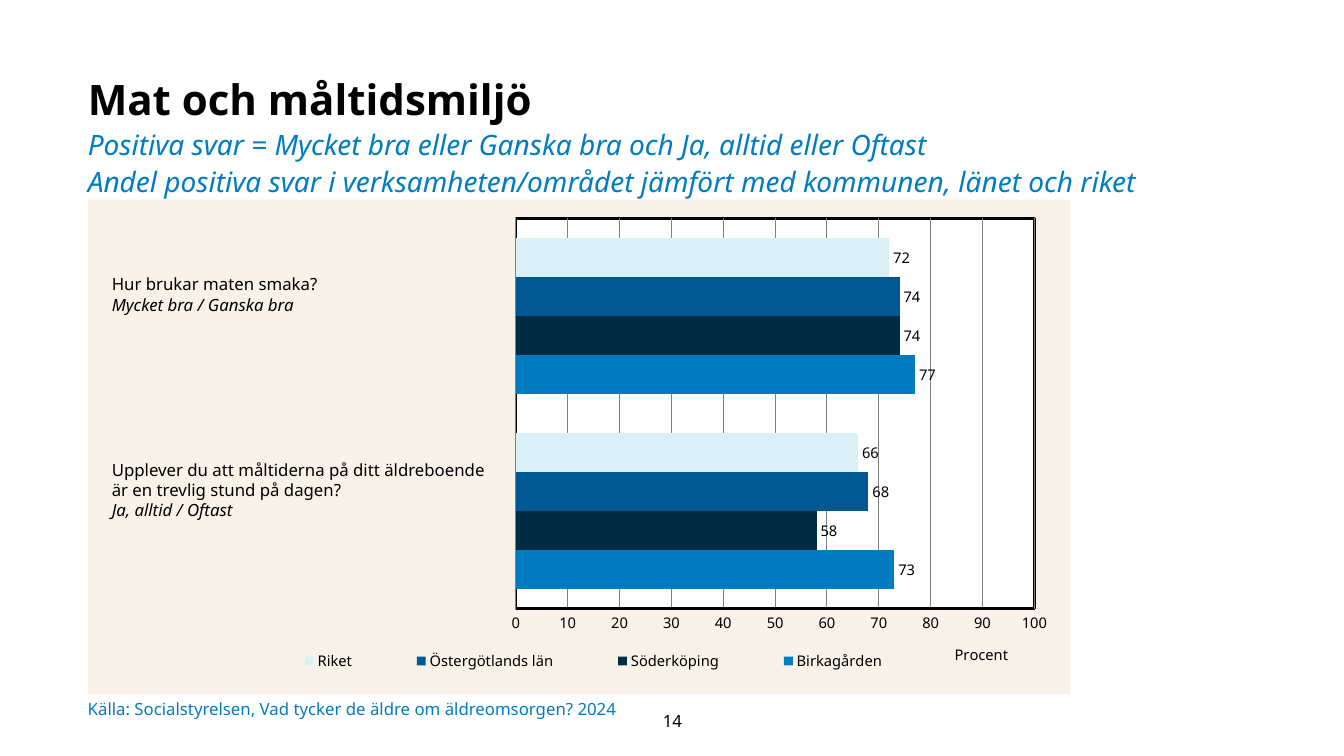
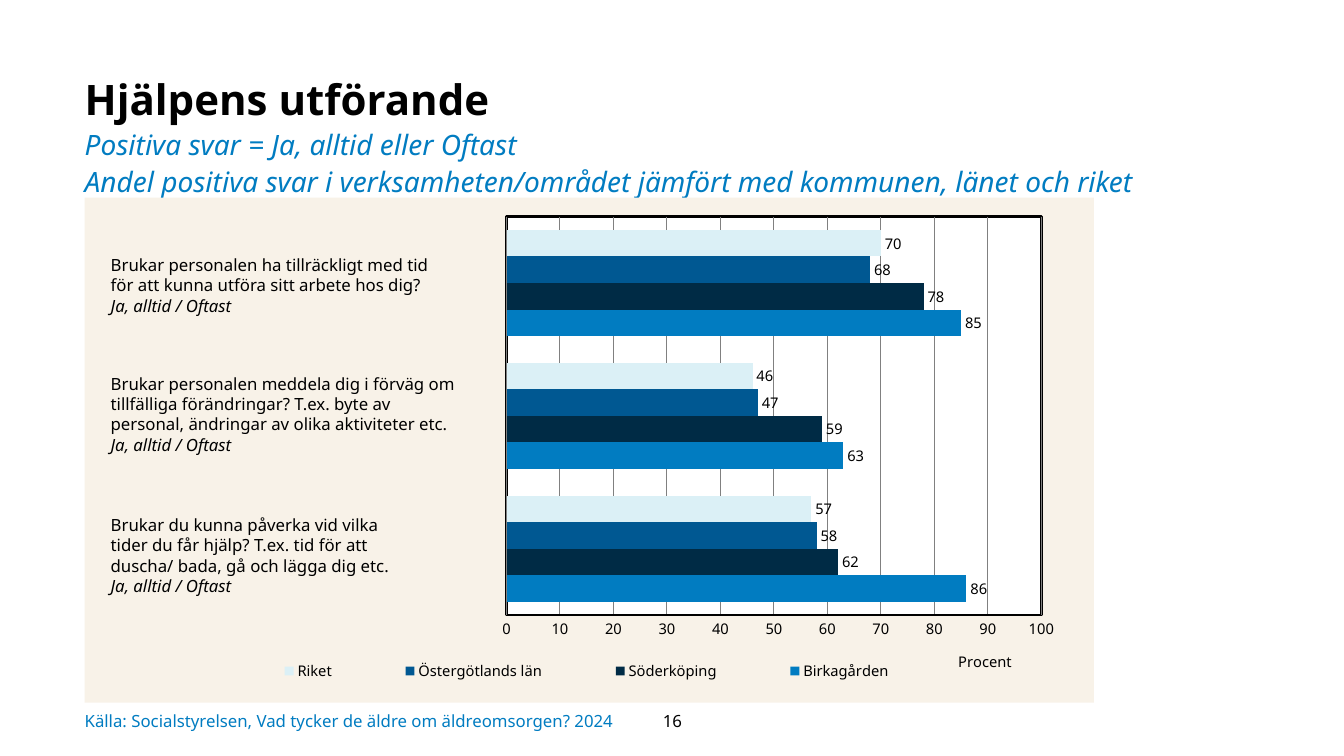
from copy import deepcopy

from pptx import Presentation
from pptx.chart.data import CategoryChartData
from pptx.dml.color import RGBColor
from pptx.enum.chart import (XL_CHART_TYPE, XL_LABEL_POSITION,
                             XL_LEGEND_POSITION, XL_TICK_MARK)
from pptx.enum.text import MSO_ANCHOR, MSO_AUTO_SIZE, PP_ALIGN
from pptx.oxml import parse_xml
from pptx.oxml.ns import nsdecls
from pptx.util import Inches, Pt

BAR = XL_CHART_TYPE.BAR_CLUSTERED
OUT_END = XL_LABEL_POSITION.OUTSIDE_END
BOTTOM = XL_LEGEND_POSITION.BOTTOM
NO_TICK = XL_TICK_MARK.NONE
TOP, MIDDLE = MSO_ANCHOR.TOP, MSO_ANCHOR.MIDDLE
NO_FIT = MSO_AUTO_SIZE.NONE
LEFT, CENTER = PP_ALIGN.LEFT, PP_ALIGN.CENTER

BLACK = RGBColor(0x00, 0x00, 0x00)
WHITE = RGBColor(0xFF, 0xFF, 0xFF)
GRAY = RGBColor(0x80, 0x80, 0x80)
CREAM = RGBColor(0xF8, 0xF2, 0xE8)
BLUE = RGBColor(0x01, 0x7C, 0xC1)
NAVY = RGBColor(0x00, 0x2B, 0x45)
OCEAN = RGBColor(0x00, 0x58, 0x92)
ICE = RGBColor(0xDB, 0xF0, 0xF6)

FONT = "Noto Sans"
HEAD = {"name": FONT, "size": Pt(30), "bold": True, "italic": False}
SUB = {"name": FONT, "size": Pt(20), "bold": False, "italic": True}
BODY = {"name": FONT, "size": Pt(12), "italic": False}
SLANT = {**BODY, "italic": True}
TICK = {"name": FONT, "size": Pt(10.5), "bold": False}

AREAS = [("Birkagården", BLUE), ("Söderköping", NAVY),
         ("Östergötlands län", OCEAN), ("Riket", ICE)]
SCOPE = ("Andel positiva svar i verksamheten/området "
         "jämfört med kommunen, länet och riket")
SOURCE = "Källa: Socialstyrelsen, Vad tycker de äldre om äldreomsorgen? 2024"


def style(font, form, color):
    for key, val in form.items():
        setattr(font, key, val)
    font.color.rgb = color


def place(node, spot, index, inner=False):
    """Give a chart part a fixed place, as shares of the chart."""
    for old in node.xpath("c:layout"):
        node.remove(old)
    target = '<c:layoutTarget val="inner"/>' if inner else ""
    modes = '<c:xMode val="edge"/><c:yMode val="edge"/>'
    sizes = "".join(f'<c:{k} val="{v}"/>' for k, v in zip("xywh", spot))
    node.insert(index, parse_xml(
        f'<c:layout {nsdecls("c")}><c:manualLayout>{target}{modes}{sizes}'
        '</c:manualLayout></c:layout>'))


def paint(fill, line="<a:noFill/>", width=0):
    return parse_xml(
        f'<c:spPr {nsdecls("c", "a")}><a:solidFill><a:srgbClr val="{fill}"/>'
        f'</a:solidFill><a:ln w="{width}">{line}</a:ln></c:spPr>')


class Deck:
    def __init__(self):
        self.prs = Presentation()
        self.prs.slide_width = Inches(13.33)
        self.prs.slide_height = Inches(7.5)
        self.slide = None

    def box(self, x, y, w, h):
        """Turn percent of the slide into lengths."""
        wide, high = self.prs.slide_width, self.prs.slide_height
        return [int(side * part / 100) for side, part in
                ((wide, x), (high, y), (wide, w), (high, h))]

    def title(self, x, width, head, answers):
        self.slide = self.prs.slides.add_slide(self.prs.slide_layouts[5])
        shape = self.slide.shapes.title
        spot = self.box(x, 9.07, width, 16.13)
        form = dict(zip(("left", "top", "width", "height"), spot))
        for key, val in form.items():
            setattr(shape, key, val)
        frame = shape.text_frame
        form = {"margin_left": 0, "margin_top": 0, "margin_right": Inches(0.1),
                "margin_bottom": Inches(0.05), "vertical_anchor": TOP,
                "auto_size": NO_FIT, "word_wrap": True}
        for key, val in form.items():
            setattr(frame, key, val)
        para = frame.paragraphs[0]
        para.alignment, para.line_spacing = LEFT, 1.1
        lines = [(head, HEAD, BLACK), (answers, SUB, BLUE), (SCOPE, SUB, BLUE)]
        for i, (words, form, color) in enumerate(lines):
            if i:
                # A break takes the size of the line it ends
                para.add_line_break()
                para._p[-1].append(deepcopy(run._r.rPr))
            run = para.add_run()
            run.text = words
            style(run.font, form, color)

    def text(self, spot, lines, color=BLACK, align=LEFT, anchor=TOP, pad=True):
        frame = self.slide.shapes.add_textbox(*self.box(*spot)).text_frame
        frame.word_wrap = True
        frame.vertical_anchor = anchor
        if not pad:
            for side in ("left", "top", "right", "bottom"):
                setattr(frame, f"margin_{side}", 0)
        for i, (words, form) in enumerate(lines):
            para = frame.add_paragraph() if i else frame.paragraphs[0]
            para.alignment = align
            run = para.add_run()
            run.text = words
            style(run.font, form, color)

    def ask(self, x, y, width, lines, answer):
        rows = [(line, BODY) for line in lines] + [(answer, SLANT)]
        self.text((x, y, width, 12), rows)

    def chart(self, spot, rows, plot, legend, unit):
        data = CategoryChartData(number_format="0")
        data.categories = [str(i + 1) for i in range(len(rows[0]))]
        for (name, _), vals in zip(AREAS, rows):
            data.add_series(name, vals)
        frame = self.slide.shapes.add_chart(BAR, *self.box(*spot), data)
        chart = frame.chart
        chart.has_title = False
        style(chart.font, TICK, BLACK)

        # Bars and their values
        bars = chart.plots[0]
        form = {"gap_width": 100, "overlap": 0, "vary_by_categories": False}
        for key, val in form.items():
            setattr(bars, key, val)
        for series, (_, color) in zip(bars.series, AREAS):
            series.format.fill.solid()
            series.format.fill.fore_color.rgb = color
            labels = series.data_labels
            labels.show_value = True
            labels.position = OUT_END
            style(labels.font, TICK, BLACK)

        # Axes
        chart.category_axis.visible = False
        axis = chart.value_axis
        form = {"minimum_scale": 0, "maximum_scale": 100, "major_unit": 10,
                "major_tick_mark": NO_TICK, "minor_tick_mark": NO_TICK,
                "has_major_gridlines": True}
        for key, val in form.items():
            setattr(axis, key, val)
        style(axis.tick_labels.font, TICK, BLACK)
        grid = axis.major_gridlines.format.line
        for line, color, width in ((grid, GRAY, 0.75),
                                   (axis.format.line, BLACK, 2)):
            line.color.rgb = color
            line.width = Pt(width)
        para = axis.axis_title.text_frame.paragraphs[0]
        run = para.add_run()
        run.text = "Procent"
        style(run.font, TICK, BLACK)

        # Legend
        chart.has_legend = True
        chart.legend.position = BOTTOM
        chart.legend.include_in_layout = False
        style(chart.legend.font, TICK, BLACK)

        # Places and backgrounds
        root = chart.element
        area = root.xpath("c:chart/c:plotArea")[0]
        place(area, plot, 0, inner=True)
        place(root.xpath("c:chart/c:legend")[0], legend, 1)
        place(area.xpath("c:valAx/c:title")[0], unit, 1)
        edge = f'<a:solidFill><a:srgbClr val="{BLACK}"/></a:solidFill>'
        area.append(paint(WHITE, edge, Pt(2)))
        root.xpath("c:chart")[0].addnext(paint(CREAM))

    def foot(self, x, y, height, page):
        self.text((x, y, 67.5, height), [(SOURCE, BODY)], BLUE,
                  anchor=MIDDLE, pad=False)
        self.text((46.21, 92.67, 7.65, 5.33), [(page, BODY)],
                  align=CENTER, anchor=MIDDLE)


def main():
    deck = Deck()

    # Food and meals
    deck.title(6.53, 80.5, "Mat och måltidsmiljö",
               "Positiva svar = Mycket bra eller Ganska bra "
               "och Ja, alltid eller Oftast")
    deck.chart((6.53, 26.4, 73.07, 65.47),
               [(73, 77), (58, 74), (68, 74), (66, 72)],
               plot=(0.436, 0.038, 0.528, 0.789),
               legend=(0.16, 0.9, 0.71, 0.065), unit=(0.88, 0.89))
    deck.ask(7.58, 35.6, 33.53, ["Hur brukar maten smaka?"],
             "Mycket bra / Ganska bra")
    deck.ask(7.58, 60.13, 33.53,
             ["Upplever du att måltiderna på ditt äldreboende",
              "är en trevlig stund på dagen?"], "Ja, alltid / Oftast")
    deck.foot(6.53, 91.87, 3.87, "14")

    # How help is given
    deck.title(6.3, 81.47, "Hjälpens utförande",
               "Positiva svar = Ja, alltid eller Oftast")
    deck.chart((6.3, 26.13, 75.09, 66.8),
               [(86, 63, 85), (62, 59, 78), (58, 47, 68), (57, 46, 70)],
               plot=(0.418, 0.038, 0.53, 0.789),
               legend=(0.13, 0.905, 0.735, 0.065), unit=(0.863, 0.89))
    asks = [
        (33.07, 35.41, ["Brukar personalen ha tillräckligt med tid",
                        "för att kunna utföra sitt arbete hos dig?"]),
        (48.8, 27.91, ["Brukar personalen meddela dig i förväg om tillfälliga "
                       "förändringar? T.ex. byte av personal, ändringar av "
                       "olika aktiviteter etc."]),
        (67.47, 22.28, ["Brukar du kunna påverka vid vilka tider du får hjälp? "
                        "T.ex. tid för att duscha/ bada, gå och lägga dig "
                        "etc."]),
    ]
    for y, width, lines in asks:
        deck.ask(7.5, y, width, lines, "Ja, alltid / Oftast")
    deck.foot(6.3, 92.67, 5.33, "16")

    deck.prs.save("out.pptx")


if __name__ == "__main__":
    main()
